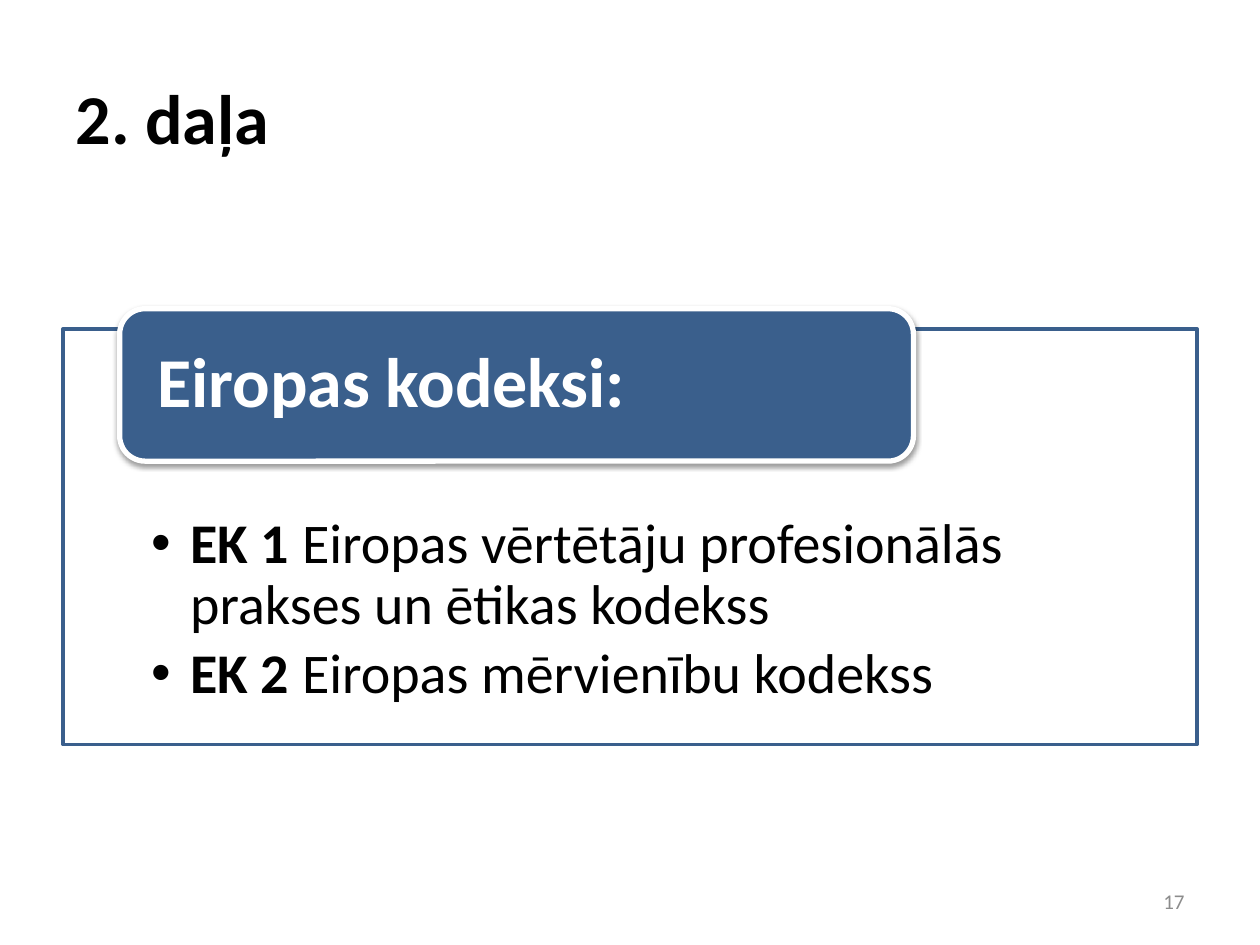
from lxml import etree
from pptx import Presentation
from pptx import util as u
from pptx.dml.color import RGBColor
from pptx.enum import shapes, text
from pptx.oxml import ns

BLACK = RGBColor(0x00, 0x00, 0x00)
WHITE = RGBColor(0xFF, 0xFF, 0xFF)
BLUE = RGBColor(0x3A, 0x5F, 0x8C)
GREY = RGBColor(0x8C, 0x8C, 0x8C)

CODES = [
    ("EK 1 ", "Eiropas vērtētāju profesionālās prakses un ētikas kodekss"),
    ("EK 2 ", "Eiropas mērvienību kodekss"),
]


def add_xml(parent, tag, **attributes):
    return etree.SubElement(parent, ns.qn(tag), attributes)


class SlideBuilder:
    font = "Calibri"

    def __init__(self, slide):
        self.slide = slide

    def place(self, box, left, top, width, height):
        box.left, box.top = u.Inches(left), u.Inches(top)
        box.width, box.height = u.Inches(width), u.Inches(height)

    def set_margins(self, frame, left, top, right, bottom):
        frame.margin_left, frame.margin_top = u.Inches(left), u.Inches(top)
        frame.margin_right, frame.margin_bottom = u.Inches(right), u.Inches(bottom)

    def paint(self, box, fill, line, width):
        box.fill.solid()
        box.fill.fore_color.rgb = fill
        box.line.color.rgb = line
        box.line.width = u.Pt(width)

    def style(self, span, size, color, bold=False):
        span.font.name = self.font
        span.font.size = u.Pt(size)
        span.font.color.rgb = color
        span.font.bold = bold

    def set_text(self, box, words, size, color, bold=False, align=text.PP_ALIGN.LEFT):
        frame = box.text_frame
        frame.word_wrap = True
        frame.vertical_anchor = text.MSO_ANCHOR.MIDDLE
        frame.text = words
        para = frame.paragraphs[0]
        para.alignment = align
        self.style(para.runs[0], size, color, bold)
        return para

    def title(self, words, *area):
        box = self.slide.shapes.title
        self.place(box, *area)
        self.set_text(box, words, 40, BLACK, bold=True)

    def framed_list(self, items, *area):
        box = self.slide.placeholders[1]
        self.place(box, *area)
        self.paint(box, WHITE, BLUE, 2)
        frame = box.text_frame
        frame.auto_size = text.MSO_AUTO_SIZE.NONE
        frame.vertical_anchor = text.MSO_ANCHOR.TOP
        self.set_margins(frame, 0.7, 1.48, 0.7, 0.25)
        for index, (code, name) in enumerate(items):
            para = frame.add_paragraph() if index else frame.paragraphs[0]
            para.level = 1
            para.line_spacing = 0.9
            para.space_before, para.space_after = u.Pt(0), u.Pt(4.8)
            for words, bold in ((code, True), (name, False)):
                span = para.add_run()
                span.text = words
                self.style(span, 32, BLACK, bold)
            # Hanging bullet
            properties = para._p.get_or_add_pPr()
            properties.set("marL", str(u.Inches(0.31)))
            properties.set("indent", str(-u.Inches(0.31)))
            add_xml(properties, "a:buFont", typeface="Arial")
            add_xml(properties, "a:buChar", char="•")

    def heading_tab(self, words, *area):
        box = self.slide.shapes.add_shape(
            shapes.MSO_SHAPE.ROUNDED_RECTANGLE, *map(u.Inches, area))
        self.paint(box, BLUE, WHITE, 3)
        self.set_margins(box.text_frame, 0.24, 0, 0.24, 0)
        para = self.set_text(box, words, 40, WHITE, bold=True)
        para.line_spacing = 0.9
        self.soft_shadow(box)

    def soft_shadow(self, box):
        box.shadow.inherit = False
        effects = box._element.spPr.find(ns.qn("a:effectLst"))
        shadow = add_xml(effects, "a:outerShdw", blurRad=str(u.Pt(3.1)),
                         dist=str(u.Pt(1.6)), dir="5400000", rotWithShape="0")
        color = add_xml(shadow, "a:srgbClr", val=str(BLACK))
        add_xml(color, "a:alpha", val="38000")

    def page_number(self, words, *area):
        box = self.slide.shapes.add_textbox(*map(u.Inches, area))
        self.set_text(box, words, 12, GREY, align=text.PP_ALIGN.RIGHT)


def main():
    deck = Presentation()
    deck.slide_width, deck.slide_height = u.Inches(10), u.Inches(7.5)
    page = SlideBuilder(deck.slides.add_slide(deck.slide_layouts[1]))

    # Title
    page.title("2. daļa", 0.5, 0.3, 9, 1.25)

    # Framed list with its heading tab
    page.framed_list(CODES, 0.5, 2.61, 9, 3.3)
    page.heading_tab("Eiropas kodeksi:", 0.95, 2.45, 6.3, 1.21)

    # Footer
    page.page_number("17", 7.17, 6.95, 2.33, 0.4)

    deck.save("out.pptx")


if __name__ == "__main__":
    main()
